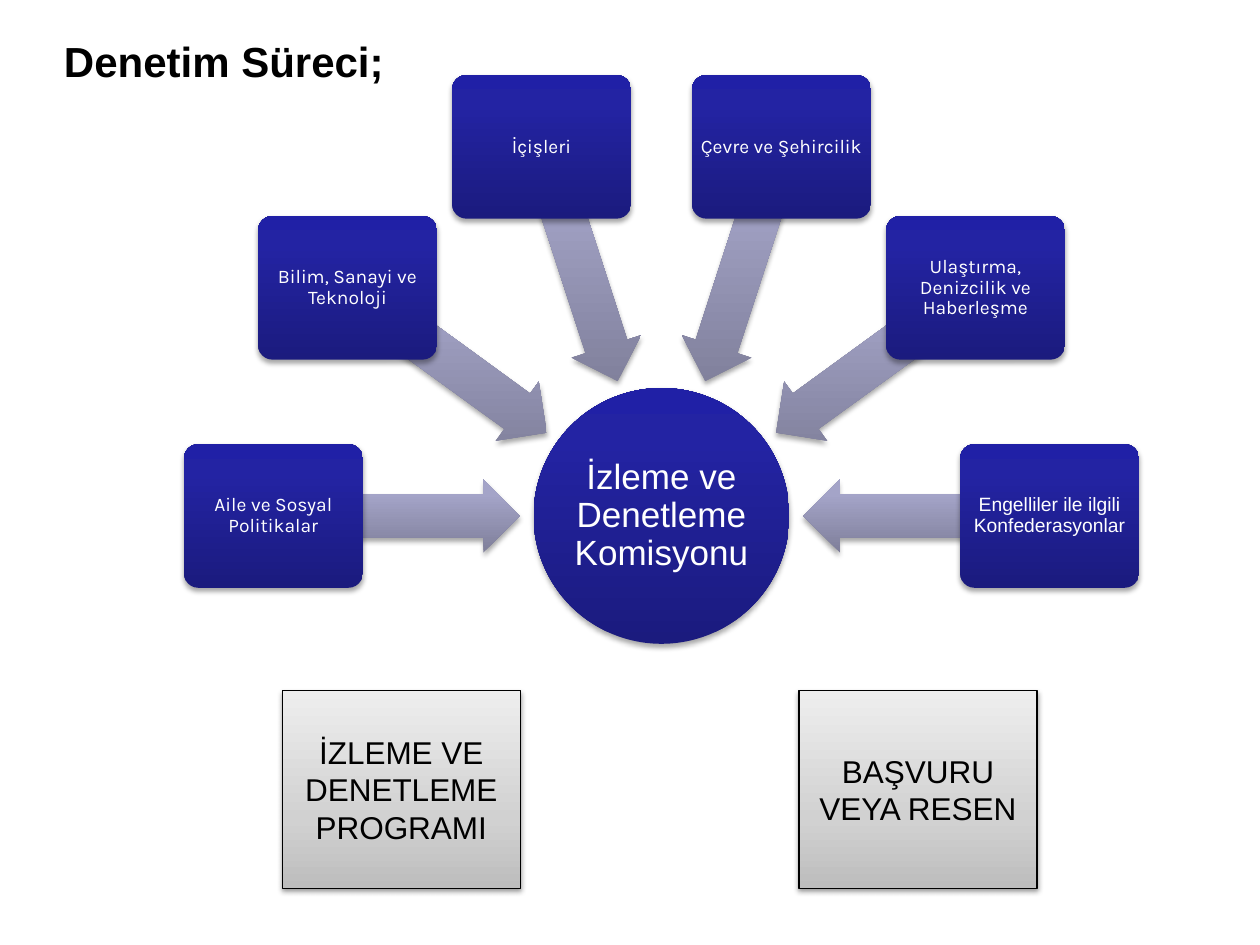
import math

from lxml import etree
from pptx import Presentation
from pptx.dml.color import RGBColor
from pptx.enum.shapes import MSO_SHAPE
from pptx.enum.text import MSO_ANCHOR, MSO_AUTO_SIZE, PP_ALIGN
from pptx.oxml import parse_xml
from pptx.oxml.ns import qn
from pptx.util import Inches, Pt

ELLIPSE, ROUND_RECT = MSO_SHAPE.OVAL, MSO_SHAPE.ROUNDED_RECTANGLE
RECT, LEFT_ARROW = MSO_SHAPE.RECTANGLE, MSO_SHAPE.LEFT_ARROW
LEFT, CENTER = PP_ALIGN.LEFT, PP_ALIGN.CENTER
TOP, MIDDLE = MSO_ANCHOR.TOP, MSO_ANCHOR.MIDDLE

SLIDE_W, SLIDE_H = Inches(10), Inches(7.5)
UNIT = SLIDE_W / 100
BLUE = [(0, "1B1B7E"), (80, "2323A3"), (100, "2020A6")]
LILAC = [(0, "7F7F9A"), (80, "A4A4C8"), (100, "A5A5C9")]
GRAY = [(0, "BDBDBD"), (35, "D1D1D1"), (100, "EEEEEE")]
WHITE, BLACK = "FFFFFF", "000000"
NS = 'xmlns:a="http://schemas.openxmlformats.org/drawingml/2006/main"'

HUB_TEXT = "İzleme ve Denetleme Komisyonu"
MEMBERS = [
    ("Aile ve Sosyal Politikalar", "Karla"),
    ("Bilim, Sanayi ve Teknoloji", "Karla"),
    ("İçişleri", "Karla"),
    ("Çevre ve Şehircilik", "Karla"),
    ("Ulaştırma, Denizcilik ve Haberleşme", "Karla"),
    ("Engelliler ile ilgili Konfederasyonlar", "Arial"),
]
TRIGGERS = ["İZLEME VE DENETLEME PROGRAMI", "BAŞVURU VEYA RESEN"]


def rgb(value):
    """Turn a hex string into a colour."""
    return RGBColor.from_string(value)


def grid(*values):
    """Convert grid units of one hundredth of the slide width to lengths."""
    return [round(v * UNIT) for v in values]


def set_text(sp, text, size=11, font="Arial", color=WHITE, bold=False,
             align=CENTER, anchor=MIDDLE, spacing=None, inset=None, wrap=True):
    """Write one formatted paragraph into a shape."""
    tf = sp.text_frame
    tf.word_wrap, tf.vertical_anchor = wrap, anchor
    if inset is not None:
        tf.margin_left = tf.margin_right = Inches(inset)
        tf.margin_top = tf.margin_bottom = Inches(inset)
    p = tf.paragraphs[0]
    p.alignment = align
    if spacing:
        p.line_spacing = spacing
    r = p.add_run()
    r.text = text
    r.font.size, r.font.name, r.font.bold = Pt(size), font, bold
    r.font.color.rgb = rgb(color)


def add_gradient_shape(slide, kind, center, size, stops, line=None,
                       rotation=0, adjustments=(), shadow=(35, 1.8)):
    """Add a centred shape with an upward gradient and a soft shadow."""
    (cx, cy), (w, h) = center, size
    sp = slide.shapes.add_shape(kind, *grid(cx - w / 2, cy - h / 2, w, h))
    sp.rotation = rotation
    for i, value in enumerate(adjustments):
        sp.adjustments[i] = value
    sp.fill.background()
    if line:
        sp.line.color.rgb, sp.line.width = rgb(line), Pt(0.75)
    else:
        sp.line.fill.background()
    sp.shadow.inherit = False
    gs = "".join(f'<a:gs pos="{pos * 1000}"><a:srgbClr val="{c}"/></a:gs>'
                 for pos, c in stops)
    spPr = sp._element.spPr
    spPr.replace(spPr.find(qn("a:noFill")), parse_xml(
        f'<a:gradFill {NS} rotWithShape="0"><a:gsLst>{gs}</a:gsLst>'
        '<a:lin ang="16200000" scaled="0"/></a:gradFill>'))
    alpha, distance = shadow
    outer = etree.SubElement(
        spPr.find(qn("a:effectLst")), qn("a:outerShdw"), blurRad=str(Pt(3.1)),
        dist=str(Pt(distance)), dir="5400000", rotWithShape="0")
    color = etree.SubElement(outer, qn("a:srgbClr"), val=BLACK)
    etree.SubElement(color, qn("a:alpha"), val=str(alpha * 1000))
    return sp


def add_title(slide, box, text):
    """Place the slide title."""
    sp = slide.shapes.add_textbox(*grid(*box))
    set_text(sp, text, size=24, color=BLACK, bold=True, align=LEFT,
             anchor=TOP, wrap=False)
    sp.text_frame.auto_size = MSO_AUTO_SIZE.SHAPE_TO_FIT_TEXT


def add_radial(slide, box, hub_text, members):
    """Place a hub at the bottom of the box with members on a half circle."""
    x, y, w, h = box
    hub, node_w, node_h = 20.3, 14.2, 11.4
    cx, cy = x + w / 2, y + h - hub / 2
    node_radius, arrow_radius = (w - node_w) / 2, 21

    def around(radius, degrees):
        """Return the point at an angle turned clockwise from the left."""
        a = math.radians(degrees)
        return cx - radius * math.cos(a), cy - radius * math.sin(a)

    sp = add_gradient_shape(slide, ELLIPSE, (cx, cy), (hub, hub), BLUE)
    set_text(sp, hub_text, size=20, spacing=0.9, inset=0.01)
    step = 180 / (len(members) - 1)
    for i, (text, font) in enumerate(members):
        angle = i * step
        add_gradient_shape(slide, LEFT_ARROW, around(arrow_radius, angle),
                           (19.5, 5.8), LILAC, rotation=(180 + angle) % 360,
                           adjustments=(0.6, 0.5))
        sp = add_gradient_shape(slide, ROUND_RECT, around(node_radius, angle),
                                (node_w, node_h), BLUE, adjustments=(0.1,))
        set_text(sp, text, font=font, spacing=0.9, inset=0.02)


def add_triggers(slide, box, texts):
    """Spread equal grey boxes from the left to the right of the box."""
    x, y, w, h = box
    card_w = 18.9
    step = (w - card_w) / (len(texts) - 1)
    for i, text in enumerate(texts):
        center = x + card_w / 2 + i * step, y + h / 2
        sp = add_gradient_shape(slide, RECT, center, (card_w, h), GRAY,
                                line=BLACK, shadow=(38, 1.6))
        set_text(sp, text, size=18, color=BLACK)


def main():
    """Build the slide and save it."""
    prs = Presentation()
    prs.slide_width, prs.slide_height = SLIDE_W, SLIDE_H
    slide = prs.slides.add_slide(prs.slide_layouts[6])
    add_radial(slide, (14.6, 6, 75.8, 45.1), HUB_TEXT, MEMBERS)
    add_triggers(slide, (22.4, 54.8, 59.9, 15.7), TRIGGERS)
    add_title(slide, (4.1, 2.3, 27.7, 5), "Denetim Süreci;")
    prs.save("out.pptx")


if __name__ == "__main__":
    main()
